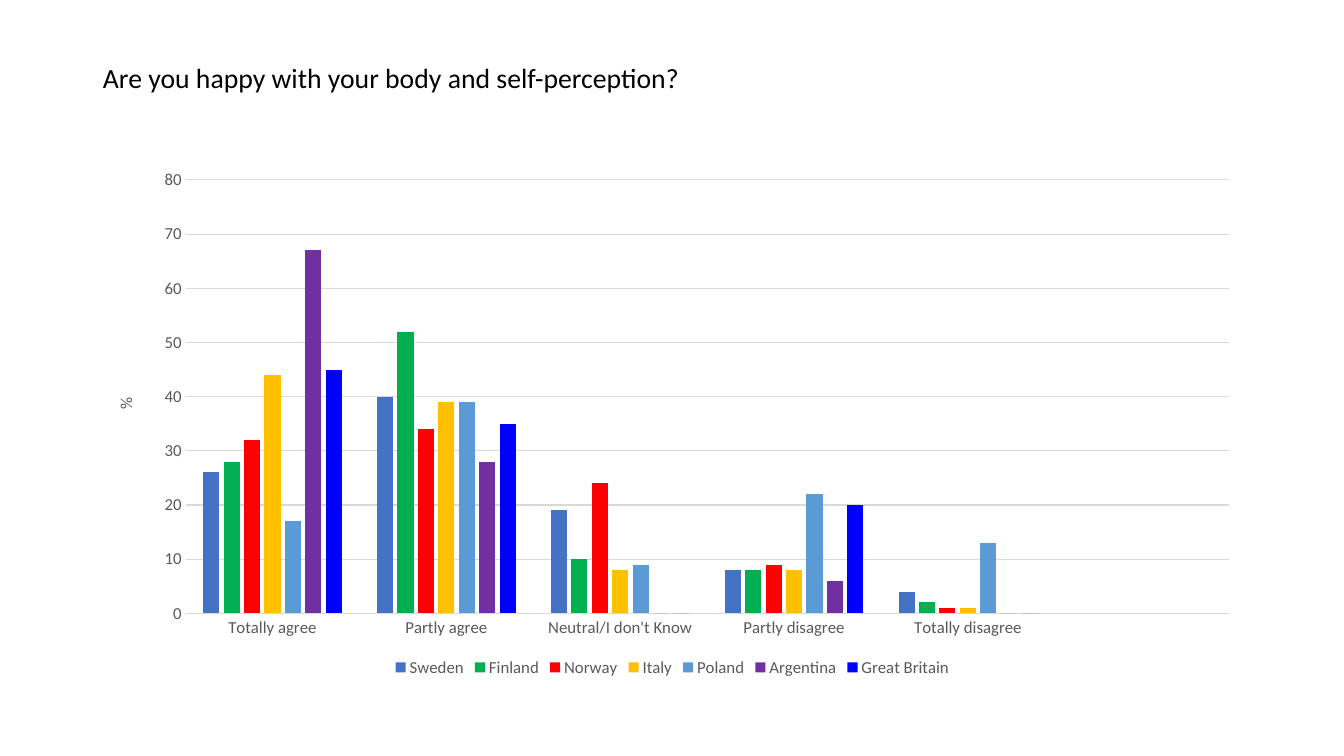
import pptx
import pptx.chart.data
import pptx.dml.color
import pptx.enum.chart
import pptx.enum.text
import pptx.oxml
import pptx.util
from dataclasses import dataclass

Cm = pptx.util.Cm
XL = pptx.enum.chart


@dataclass(frozen=True)
class Theme:
    font: str = "Calibri"
    ink: str = "000000"
    label: str = "595959"
    grid: str = "D9D9D9"
    title_size: float = 19.8
    label_size: float = 12
    line_width: float = 0.75


CATEGORIES = ["Totally agree", "Partly agree", "Neutral/I don't Know",
              "Partly disagree", "Totally disagree", ""]

# Country: colour, percentages per answer (the last category is empty)
COUNTRIES = {
    "Sweden": ("4472C4", [26, 40, 19, 8, 4, None]),
    "Finland": ("00B050", [28, 52, 10, 8, 2, None]),
    "Norway": ("FF0000", [32, 34, 24, 9, 1, None]),
    "Italy": ("FFC000", [44, 39, 8, 8, 1, None]),
    "Poland": ("5B9BD5", [17, 39, 9, 22, 13, None]),
    "Argentina": ("7030A0", [67, 28, 0, 6, 0, None]),
    "Great Britain": ("0000FF", [45, 35, 0, 20, 0, None]),
}


def rgb(color):
    return pptx.dml.color.RGBColor.from_string(color)


def apply(obj, values):
    for name, value in values.items():
        setattr(obj, name, value)


class SlideBuilder:
    def __init__(self, prs, theme):
        self.theme = theme
        self.s = prs.slides.add_slide(prs.slide_layouts[5])

    def style_font(self, font, size, color):
        apply(font, {"name": self.theme.font, "size": pptx.util.Pt(size), "bold": False})
        font.color.rgb = rgb(color)

    def style_line(self, line):
        line.color.rgb = rgb(self.theme.grid)
        line.width = pptx.util.Pt(self.theme.line_width)

    def title(self, text, left, top, width, height):
        sp = self.s.shapes.title
        apply(sp, {"left": Cm(left), "top": Cm(top), "width": Cm(width), "height": Cm(height)})
        tf = sp.text_frame
        apply(tf, {"word_wrap": True, "margin_top": 0,
                   "auto_size": pptx.enum.text.MSO_AUTO_SIZE.NONE,
                   "vertical_anchor": pptx.enum.text.MSO_ANCHOR.TOP})
        p = tf.paragraphs[0]
        apply(p, {"alignment": pptx.enum.text.PP_ALIGN.LEFT, "line_spacing": 0.9})
        r = p.add_run()
        r.text = text
        self.style_font(r.font, self.theme.title_size, self.theme.ink)

    def column_chart(self, categories, series, left, top, width, height):
        data = pptx.chart.data.CategoryChartData()
        data.categories = categories
        for name, (_, values) in series.items():
            data.add_series(name, values)
        chart = self.s.shapes.add_chart(
            XL.XL_CHART_TYPE.COLUMN_CLUSTERED,
            Cm(left), Cm(top), Cm(width), Cm(height), data).chart
        apply(chart, {"has_title": False, "has_legend": True})
        self.style_font(chart.font, self.theme.label_size, self.theme.label)
        apply(chart.legend, {"position": XL.XL_LEGEND_POSITION.BOTTOM,
                             "include_in_layout": False})
        self.style_font(chart.legend.font, self.theme.label_size, self.theme.label)

        # Columns
        plot = chart.plots[0]
        apply(plot, {"gap_width": 219, "overlap": -27, "vary_by_categories": False})
        for column, (color, _) in zip(plot.series, series.values()):
            column.invert_if_negative = False
            column.format.fill.solid()
            column.format.fill.fore_color.rgb = rgb(color)
        return chart

    def axes(self, chart, value_title, top_value, step):
        for axis in (chart.category_axis, chart.value_axis):
            apply(axis, {"major_tick_mark": XL.XL_TICK_MARK.NONE,
                         "minor_tick_mark": XL.XL_TICK_MARK.NONE})
            self.style_font(axis.tick_labels.font, self.theme.label_size, self.theme.label)
        self.style_line(chart.category_axis.format.line)

        axis = chart.value_axis
        apply(axis, {"minimum_scale": 0, "maximum_scale": top_value, "major_unit": step,
                     "has_major_gridlines": True, "has_title": True})
        axis.format.line.fill.background()
        self.style_line(axis.major_gridlines.format.line)
        tf = axis.axis_title.text_frame
        tf.text = value_title
        self.style_font(tf.paragraphs[0].runs[0].font, self.theme.label_size, self.theme.label)
        tf._txBody.bodyPr.set("rot", "-5400000")

    def plot_area(self, chart, **fractions):
        """Place the inner plot area by fractions of the chart."""
        ns = "http://schemas.openxmlformats.org/drawingml/2006/chart"
        parts = "".join(f'<c:{key} val="{value}"/>' for key, value in fractions.items())
        layout = pptx.oxml.parse_xml(
            f'<c:layout xmlns:c="{ns}"><c:manualLayout><c:layoutTarget val="inner"/>'
            f'<c:xMode val="edge"/><c:yMode val="edge"/>{parts}'
            '</c:manualLayout></c:layout>')
        area = chart._chartSpace.chart.plotArea
        for old in area.findall(f"{{{ns}}}layout"):
            area.remove(old)
        area.insert(0, layout)


def main():
    prs = pptx.Presentation()
    apply(prs, {"slide_width": Cm(33.87), "slide_height": Cm(19.05)})
    slide = SlideBuilder(prs, Theme())

    # Question
    slide.title("Are you happy with your body and self-perception?", 2.34, 1.63, 29.21, 2.39)

    # Answers by country
    chart = slide.column_chart(CATEGORIES, COUNTRIES, 2.34, 4.01, 29.21, 13.16)
    slide.axes(chart, "%", 80, 10)
    slide.plot_area(chart, x=0.08, y=0.04, w=0.9, h=0.83)

    prs.save("out.pptx")


if __name__ == "__main__":
    main()
